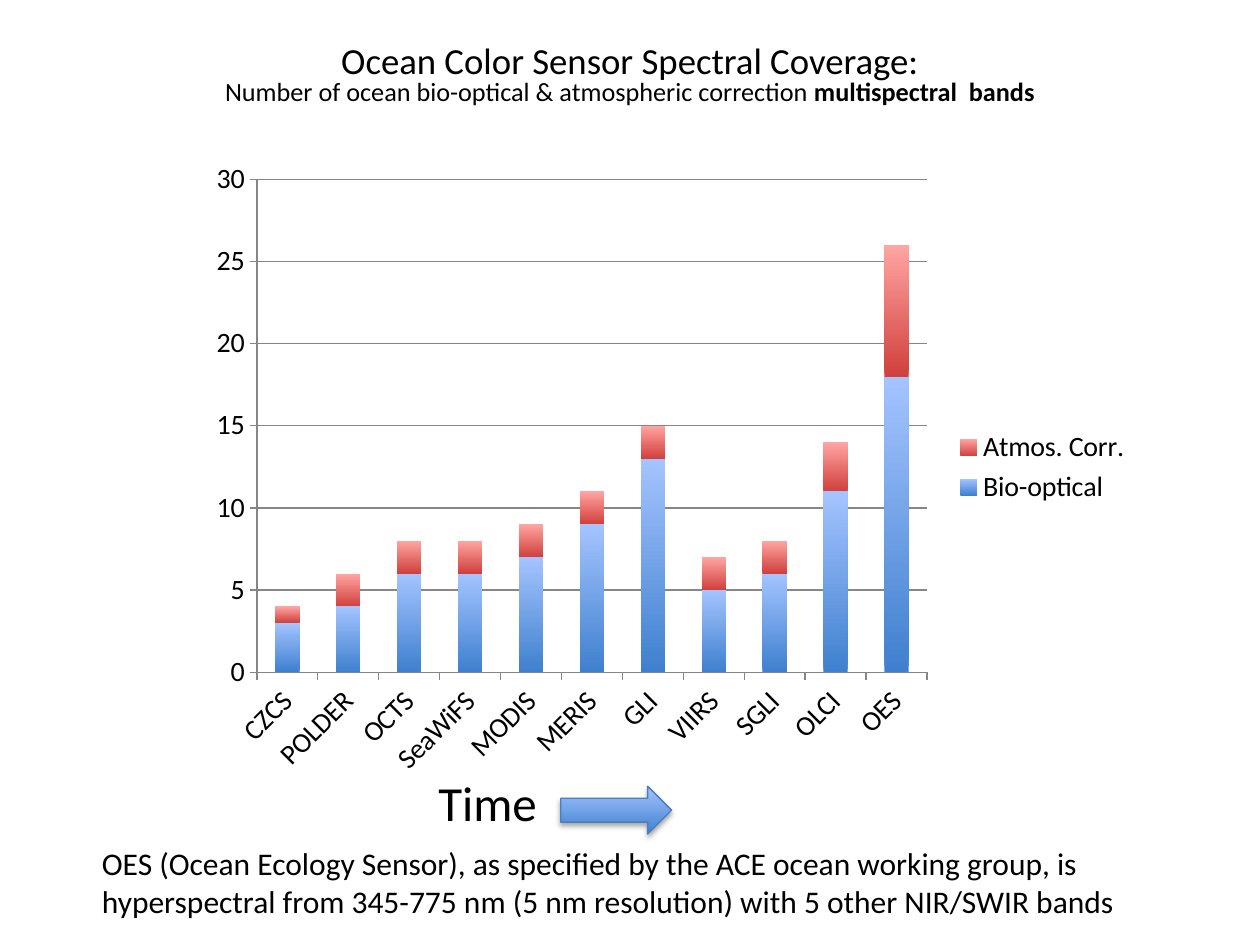
from dataclasses import dataclass

from lxml import etree
from pptx import Presentation
from pptx import util as u
from pptx.chart.data import CategoryChartData
from pptx.dml.color import RGBColor
from pptx.enum import chart as ch, shapes, text
from pptx.oxml import parse_xml
from pptx.oxml.ns import nsdecls, qn

FONT = "Calibri"
COLORS = {
    "text": "000000",
    "axis": "868686",
    "blue_dark": "3F80CE",
    "blue_light": "A4C4FF",
    "red_dark": "D1403C",
    "red_light": "FFA5A3",
    "arrow_line": "4B7EBC",
}
SENSORS = ["CZCS", "POLDER", "OCTS", "SeaWiFS", "MODIS", "MERIS",
           "GLI", "VIIRS", "SGLI", "OLCI", "OES"]


@dataclass
class Box:
    left: float
    top: float
    width: float
    height: float

    def lengths(self) -> tuple:
        return tuple(u.Inches(v) for v in (self.left, self.top, self.width, self.height))


@dataclass
class BandSeries:
    name: str
    counts: list
    hue: str


@dataclass
class Run:
    text: str
    size: float
    bold: bool = False


@dataclass
class Label:
    box: Box
    lines: list
    wrap: bool = True
    centered: bool = False
    spacing: float = 1.0


SERIES = [
    BandSeries("Bio-optical", [3, 4, 6, 6, 7, 9, 13, 5, 6, 11, 18], "blue"),
    BandSeries("Atmos. Corr.", [1, 2, 2, 2, 2, 2, 2, 2, 2, 3, 8], "red"),
]
TITLE = Label(
    Box(0.5, 0.3, 9, 0.61),
    [[Run("Ocean Color Sensor Spectral Coverage:", 21)],
     [Run("Number of ocean bio-optical & atmospheric correction ", 15),
      Run("multispectral  bands", 15, bold=True)]],
    centered=True, spacing=0.8)
NOTE = Label(
    Box(0.71, 6.65, 8.52, 0.71),
    [[Run("OES (Ocean Ecology Sensor), as specified by the ACE ocean working group, is "
          "hyperspectral from 345-775 nm (5 nm resolution) with 5 other NIR/SWIR bands", 18)]])
TIME = Label(Box(3.38, 6.08, 0.99, 0.57), [[Run("Time", 28)]], wrap=False)


def rgb(name: str) -> RGBColor:
    return RGBColor.from_string(COLORS[name])


def style_font(font, size: float, bold: bool = False) -> None:
    font.name = FONT
    font.size = u.Pt(size)
    font.bold = bold
    font.color.rgb = rgb("text")


def fill_gradient(fill, hue: str) -> None:
    """Run from the dark tone at the bottom to the light tone at the top."""
    fill.gradient()
    fill.gradient_angle = 90
    for stop, tone, position in zip(fill.gradient_stops, ("dark", "light"), (0, 1)):
        stop.color.rgb = rgb(f"{hue}_{tone}")
        stop.position = position


def add_label(s, label: Label) -> None:
    tf = s.shapes.add_textbox(*label.box.lengths()).text_frame
    tf.word_wrap = label.wrap
    p = tf.paragraphs[0]
    if label.centered:
        tf.vertical_anchor = text.MSO_ANCHOR.MIDDLE
        p.alignment = text.PP_ALIGN.CENTER
    else:
        tf.auto_size = text.MSO_AUTO_SIZE.SHAPE_TO_FIT_TEXT
    p.line_spacing = label.spacing
    for i, line in enumerate(label.lines):
        if i:
            p.add_line_break()
        for run in line:
            r = p.add_run()
            r.text = run.text
            style_font(r.font, run.size, run.bold)


def style_line(line, color: str) -> None:
    line.color.rgb = rgb(color)
    line.width = u.Pt(0.75)


def set_plot_area(chart, x: float, y: float, w: float, h: float) -> None:
    """Fix the inner plot area as fractions of the chart."""
    plot_area = chart._chartSpace.chart.plotArea
    for old in plot_area.findall(qn("c:layout")):
        plot_area.remove(old)
    layout = etree.Element(qn("c:layout"))
    manual = etree.SubElement(layout, qn("c:manualLayout"))
    settings = {"layoutTarget": "inner", "xMode": "edge", "yMode": "edge",
                "x": x, "y": y, "w": w, "h": h}
    for tag, value in settings.items():
        etree.SubElement(manual, qn(f"c:{tag}")).set("val", str(value))
    plot_area.insert(0, layout)


def add_band_chart(s, box: Box) -> None:
    data = CategoryChartData()
    data.categories = SENSORS
    for series in SERIES:
        data.add_series(series.name, series.counts)
    chart = s.shapes.add_chart(ch.XL_CHART_TYPE.COLUMN_STACKED, *box.lengths(), data).chart
    style_font(chart.font, 10)
    chart.has_title = False
    chart.has_legend = True
    chart.legend.position = ch.XL_LEGEND_POSITION.RIGHT
    chart.legend.include_in_layout = False
    style_font(chart.legend.font, 16)

    plot = chart.plots[0]
    plot.vary_by_categories = False
    plot.gap_width = 150
    plot.overlap = 100
    for drawn, series in zip(plot.series, SERIES):
        fill_gradient(drawn.format.fill, series.hue)

    for axis in (chart.category_axis, chart.value_axis):
        axis.major_tick_mark = ch.XL_TICK_MARK.OUTSIDE
        axis.minor_tick_mark = ch.XL_TICK_MARK.NONE
        style_font(axis.tick_labels.font, 16)
        style_line(axis.format.line, "axis")
    chart.category_axis._element.txPr.bodyPr.set("rot", str(-45 * 60000))
    values = chart.value_axis
    values.minimum_scale, values.maximum_scale, values.major_unit = 0, 30, 5
    values.has_major_gridlines = True
    style_line(values.major_gridlines.format.line, "axis")
    set_plot_area(chart, 0.06, 0.05, 0.71, 0.77)


def add_time_arrow(s, box: Box) -> None:
    sp = s.shapes.add_shape(shapes.MSO_SHAPE.RIGHT_ARROW, *box.lengths())
    fill_gradient(sp.fill, "blue")
    style_line(sp.line, "arrow_line")
    sp.shadow.inherit = False
    sp._element.spPr.find(qn("a:effectLst")).append(parse_xml(
        f'<a:outerShdw {nsdecls("a")} blurRad="{u.Pt(3.1)}" dist="{u.Pt(1.8)}" '
        f'dir="{90 * 60000}" rotWithShape="0"><a:srgbClr val="{COLORS["text"]}">'
        '<a:alpha val="35000"/></a:srgbClr></a:outerShdw>'))


def main() -> None:
    prs = Presentation()
    prs.slide_width, prs.slide_height = u.Inches(10), u.Inches(7.5)
    s = prs.slides.add_slide(prs.slide_layouts[6])
    add_label(s, TITLE)
    add_label(s, NOTE)
    add_band_chart(s, Box(1.59, 1.17, 7.49, 5.08))
    add_label(s, TIME)
    add_time_arrow(s, Box(4.45, 6.24, 0.88, 0.38))
    prs.save("out.pptx")


if __name__ == "__main__":
    main()
